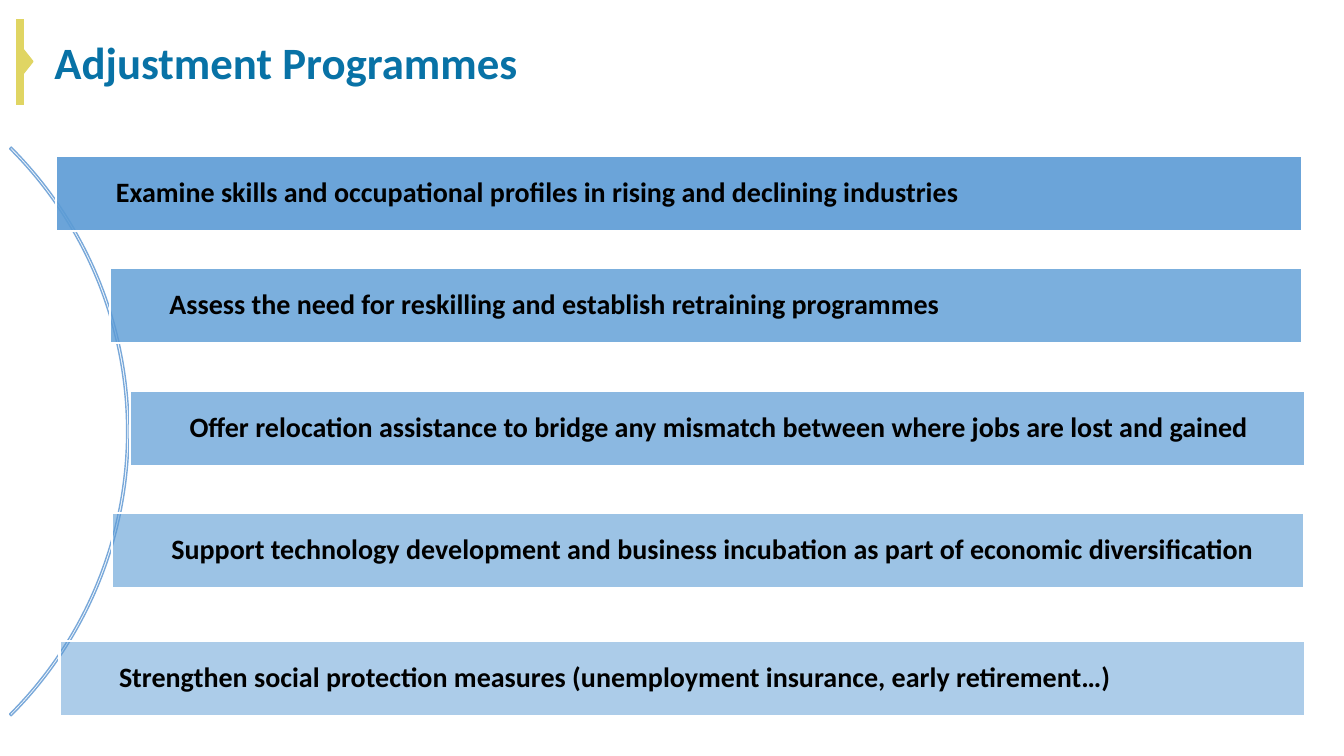
"""Build the Adjustment Programmes slide: a title and five bars along an arc."""
from lxml.etree import SubElement
from pptx import Presentation
from pptx.dml.color import RGBColor
from pptx.enum.shapes import MSO_CONNECTOR, MSO_SHAPE
from pptx.enum.text import MSO_ANCHOR, MSO_AUTO_SIZE, PP_ALIGN
from pptx.oxml.ns import qn
from pptx.util import Inches, Pt

TITLE_BLUE = RGBColor(0x08, 0x72, 0xA6)
BAR_BLUE = RGBColor(0x5B, 0x9B, 0xD5)
ARC_BLUE = RGBColor(0x7A, 0xA9, 0xDA)
ACCENT_YELLOW = RGBColor(0xE0, 0xD5, 0x63)
WHITE = RGBColor(0xFF, 0xFF, 0xFF)
BLACK = RGBColor(0x00, 0x00, 0x00)

WIDTH, HEIGHT = Inches(13.33), Inches(7.5)
COLUMN, ROW = WIDTH / 100, HEIGHT / 100
BAR_ROWS = 9.87
BARS = [
    ("Examine skills and occupational profiles in rising and declining industries", 4.2, 20.67, 92.65),
    ("Assess the need for reskilling and establish retraining programmes", 8.18, 35.47, 88.67),
    ("Offer relocation assistance to bridge any mismatch between where jobs are lost and gained", 9.68, 51.73, 87.4),
    ("Support technology development and business incubation as part of economic diversification", 8.33, 67.87, 88.67),
    ("Strengthen social protection measures (unemployment insurance, early retirement…)", 4.43, 84.8, 92.65),
]


def grid_box(left, top, width, height):
    return int(left * COLUMN), int(top * ROW), int(width * COLUMN), int(height * ROW)


def write_text(shape, text, size, color, anchor=MSO_ANCHOR.MIDDLE, spacing=1.0):
    frame = shape.text_frame
    frame.vertical_anchor = anchor
    paragraph = frame.paragraphs[0]
    paragraph.text = text
    paragraph.alignment = PP_ALIGN.LEFT
    paragraph.line_spacing = spacing
    font = paragraph.font
    font.name, font.size, font.bold = "Calibri", Pt(size), True
    font.color.rgb = color
    return frame


presentation = Presentation()
presentation.slide_width, presentation.slide_height = WIDTH, HEIGHT
slide = presentation.slides.add_slide(presentation.slide_layouts[5])
shapes = slide.shapes

title = shapes.title
title.left, title.top, title.width, title.height = grid_box(3.3, 3.87, 36.23, 8.53)
title_frame = write_text(title, "Adjustment Programmes", 32, TITLE_BLUE, anchor=MSO_ANCHOR.TOP)
title_frame.word_wrap = False
title_frame.auto_size = MSO_AUTO_SIZE.SHAPE_TO_FIT_TEXT

arc = shapes.add_shape(MSO_SHAPE.BLOCK_ARC, *grid_box(-50.26, 3.87, 59.86, 106.4))
arc.shadow.inherit = False
for index, adjustment in enumerate((189, 27, 0.003)):
    arc.adjustments[index] = adjustment
arc.fill.background()
arc.line.color.rgb = ARC_BLUE
arc.line.width = Pt(1)

for index, (text, left, top, width) in enumerate(BARS):
    bar = shapes.add_shape(MSO_SHAPE.RECTANGLE, *grid_box(left, top, width, BAR_ROWS))
    bar.shadow.inherit = False
    bar.fill.solid()
    bar.fill.fore_color.rgb = BAR_BLUE
    fill_color = bar.fill._xPr.find(qn("a:solidFill")).find(qn("a:srgbClr"))
    SubElement(fill_color, qn("a:alpha")).set("val", str(90000 - 10000 * index))
    bar.line.color.rgb = WHITE
    bar.line.width = Pt(1.5)
    bar_frame = write_text(bar, text, 20, BLACK, spacing=0.9)
    bar_frame.word_wrap = True
    bar_frame.margin_left = Inches(0.59)
    bar_frame.margin_top = bar_frame.margin_right = bar_frame.margin_bottom = Inches(0.06)

marker_x = int(1.5 * COLUMN)
marker = shapes.add_connector(
    MSO_CONNECTOR.STRAIGHT, marker_x, int(2.53 * ROW), marker_x, int(13.87 * ROW)
)
marker.line.color.rgb = ACCENT_YELLOW
marker.line.width = Pt(6)
SubElement(marker._element.spPr, qn("a:effectLst"))

pointer = shapes.add_shape(MSO_SHAPE.ISOSCELES_TRIANGLE, *grid_box(1.13, 7.47, 1.88, 1.33))
pointer.shadow.inherit = False
pointer.rotation = 90
pointer.fill.solid()
pointer.fill.fore_color.rgb = ACCENT_YELLOW
pointer.line.color.rgb = ACCENT_YELLOW
pointer.line.width = Pt(1)

presentation.save("out.pptx")
